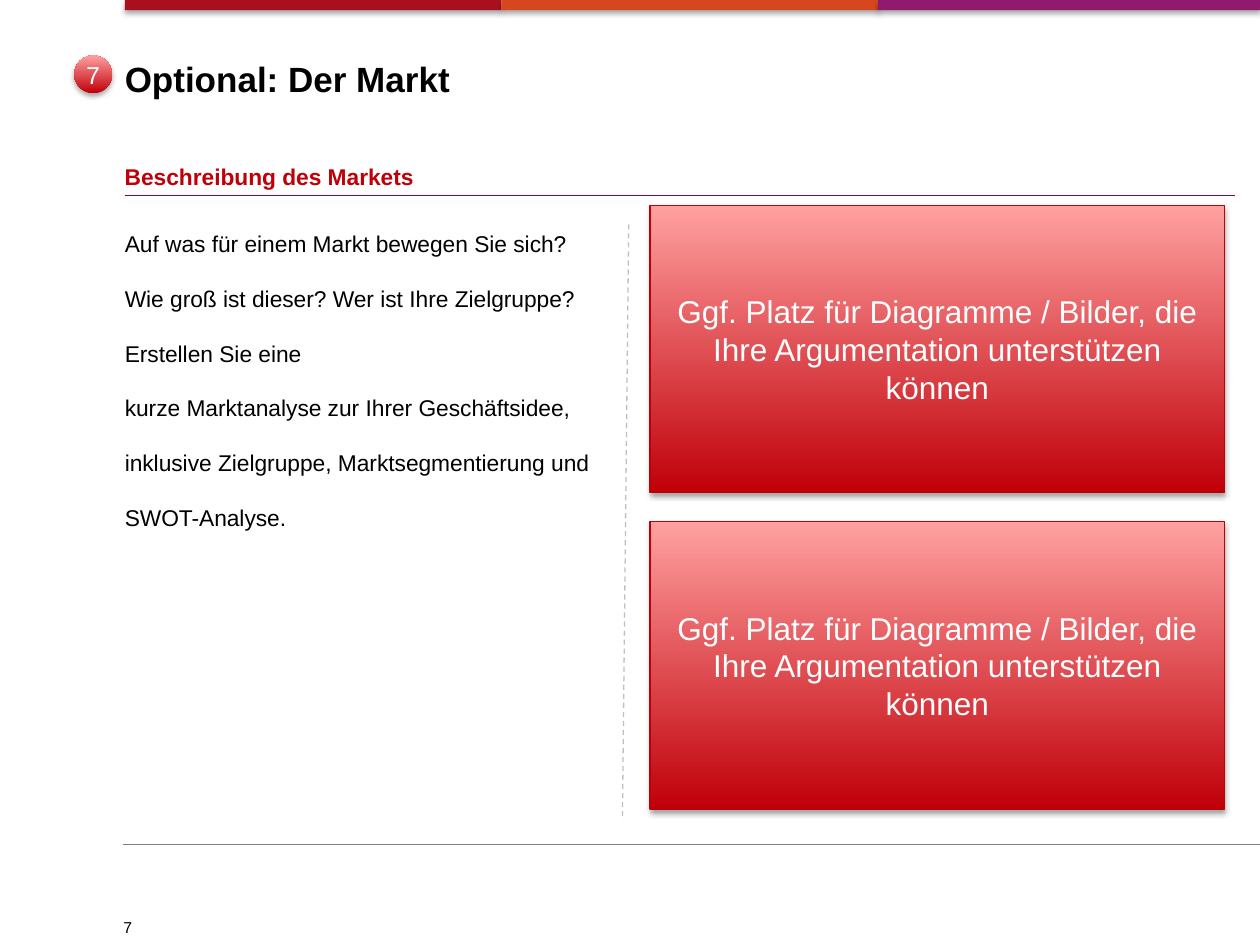
from dataclasses import dataclass

from lxml import etree
from pptx import Presentation, util as u
from pptx.dml.color import RGBColor
from pptx.enum import dml, shapes, text
from pptx.oxml import parse_xml
from pptx.oxml.ns import nsdecls, qn

Inches, Pt = u.Inches, u.Pt


@dataclass(frozen=True)
class Theme:
    font: str = "Arial"
    black: str = "000000"
    white: str = "FFFFFF"
    red: str = "C00009"
    pink: str = "FFA0A0"
    border: str = "BC0009"
    rule: str = "740B5C"
    footer: str = "808080"
    divider: str = "BFBFBF"
    bands: tuple = ("AA0F1F", "D7471F", "901B6E")
    title: int = 20
    body: int = 13
    panel: int = 18
    badge: int = 14
    number: int = 9


T = Theme()


def write(tf, lines, size, color, bold=False, spacing=None, align=None,
          margin=0, wrap=True, anchor=text.MSO_ANCHOR.TOP):
    """Fill a text frame with one paragraph per line."""
    tf.word_wrap = wrap
    tf.vertical_anchor = anchor
    if margin is not None:
        tf.margin_left = tf.margin_right = tf.margin_top = tf.margin_bottom = margin
    for i, line in enumerate(lines):
        p = tf.add_paragraph() if i else tf.paragraphs[0]
        p.alignment = align
        p.line_spacing = spacing
        r = p.add_run()
        r.text = line
        r.font.name, r.font.size, r.font.bold = T.font, Pt(size), bold
        r.font.color.rgb = RGBColor.from_string(color)


def add_block(kind, x, y, w, h, colors, border=None):
    """Add a shadowed shape; two colours make a gradient from bottom to top."""
    sp = s.shapes.add_shape(kind, Inches(x), Inches(y), Inches(w), Inches(h))
    if len(colors) == 1:
        sp.fill.solid()
        sp.fill.fore_color.rgb = RGBColor.from_string(colors[0])
    else:
        sp.fill.gradient()
        sp.fill.gradient_angle = 90
        for stop, color, position in zip(sp.fill.gradient_stops, colors, (0, 1)):
            stop.color.rgb = RGBColor.from_string(color)
            stop.position = position
    if border:
        sp.line.color.rgb = RGBColor.from_string(border)
        sp.line.width = Pt(0.75)
    else:
        sp.line.fill.background()
    sp.shadow.inherit = False
    sp._element.spPr.find(qn("a:effectLst")).append(parse_xml(
        f'<a:outerShdw {nsdecls("a")} blurRad="{Pt(3.1)}" dist="{Pt(1.8)}" '
        f'dir="5400000" rotWithShape="0"><a:srgbClr val="{T.black}">'
        '<a:alpha val="35000"/></a:srgbClr></a:outerShdw>'))
    return sp


prs = Presentation()
prs.slide_width, prs.slide_height = Inches(10), Inches(7.5)
s = prs.slides.add_slide(prs.slide_layouts[6])
RECT, OVAL = shapes.MSO_SHAPE.RECTANGLE, shapes.MSO_SHAPE.OVAL
MIDDLE, CENTER = text.MSO_ANCHOR.MIDDLE, text.PP_ALIGN.CENTER
left, band_w = 0.99, 2.99

# Colour bands along the top; the last one runs to the slide edge
for i, color in enumerate(T.bands):
    x = left + i * band_w
    w = 10 - x if color == T.bands[-1] else band_w
    add_block(RECT, x, 0, w, 0.08, [color])

# Footer rule, heading rule and dashed column divider
for x1, y1, x2, y2, color, width, dash in (
    (0.98, 6.7, 10, 6.7, T.footer, 0.5, None),
    (left, 1.55, 9.8, 1.55, T.rule, 0.75, None),
    (4.99, 1.78, 4.94, 6.51, T.divider, 0.75, dml.MSO_LINE.DASH),
):
    line = s.shapes.add_connector(shapes.MSO_CONNECTOR.STRAIGHT, Inches(x1),
                                  Inches(y1), Inches(x2), Inches(y2))
    line.line.color.rgb = RGBColor.from_string(color)
    line.line.width = Pt(width)
    if dash:
        line.line.dash_style = dash
    etree.SubElement(line._element.spPr, qn("a:effectLst"))

# Title, heading, body text and slide number
body = [
    "Auf was für einem Markt bewegen Sie sich? Wie groß ist dieser? "
    "Wer ist Ihre Zielgruppe? Erstellen Sie eine",
    "kurze Marktanalyse zur Ihrer Geschäftsidee, inklusive Zielgruppe, "
    "Marktsegmentierung und SWOT-Analyse.",
]
for x, y, w, h, lines, size, color, style in (
    (left, 0.4, 8.81, 0.96, ["Optional: Der Markt"], T.title, T.black,
     dict(bold=True, spacing=Pt(28))),
    (left, 1.29, 3.7, 0.24, ["Beschreibung des Markets"], T.body, T.red,
     dict(bold=True)),
    (left, 1.61, 3.78, 2.56, body, T.body, T.black, dict(spacing=2.0)),
    (0.98, 7.27, 1.34, 0.19, ["7"], T.number, T.black,
     dict(spacing=Pt(11.8), wrap=False, align=text.PP_ALIGN.LEFT)),
):
    box = s.shapes.add_textbox(Inches(x), Inches(y), Inches(w), Inches(h))
    write(box.text_frame, lines, size, color, **style)

# Numbered badge beside the title
badge = add_block(OVAL, 0.59, 0.44, 0.3, 0.3, [T.red, T.pink])
write(badge.text_frame, ["7"], T.badge, T.white, align=CENTER, wrap=False,
      anchor=MIDDLE)

# Two panels for diagrams
for y in (1.63, 4.14):
    panel = add_block(RECT, 5.16, y, 4.56, 2.28, [T.red, T.pink], T.border)
    write(panel.text_frame,
          ["Ggf. Platz für Diagramme / Bilder, die Ihre Argumentation "
           "unterstützen können"],
          T.panel, T.white, align=CENTER, margin=None, anchor=MIDDLE)

prs.save("out.pptx")
